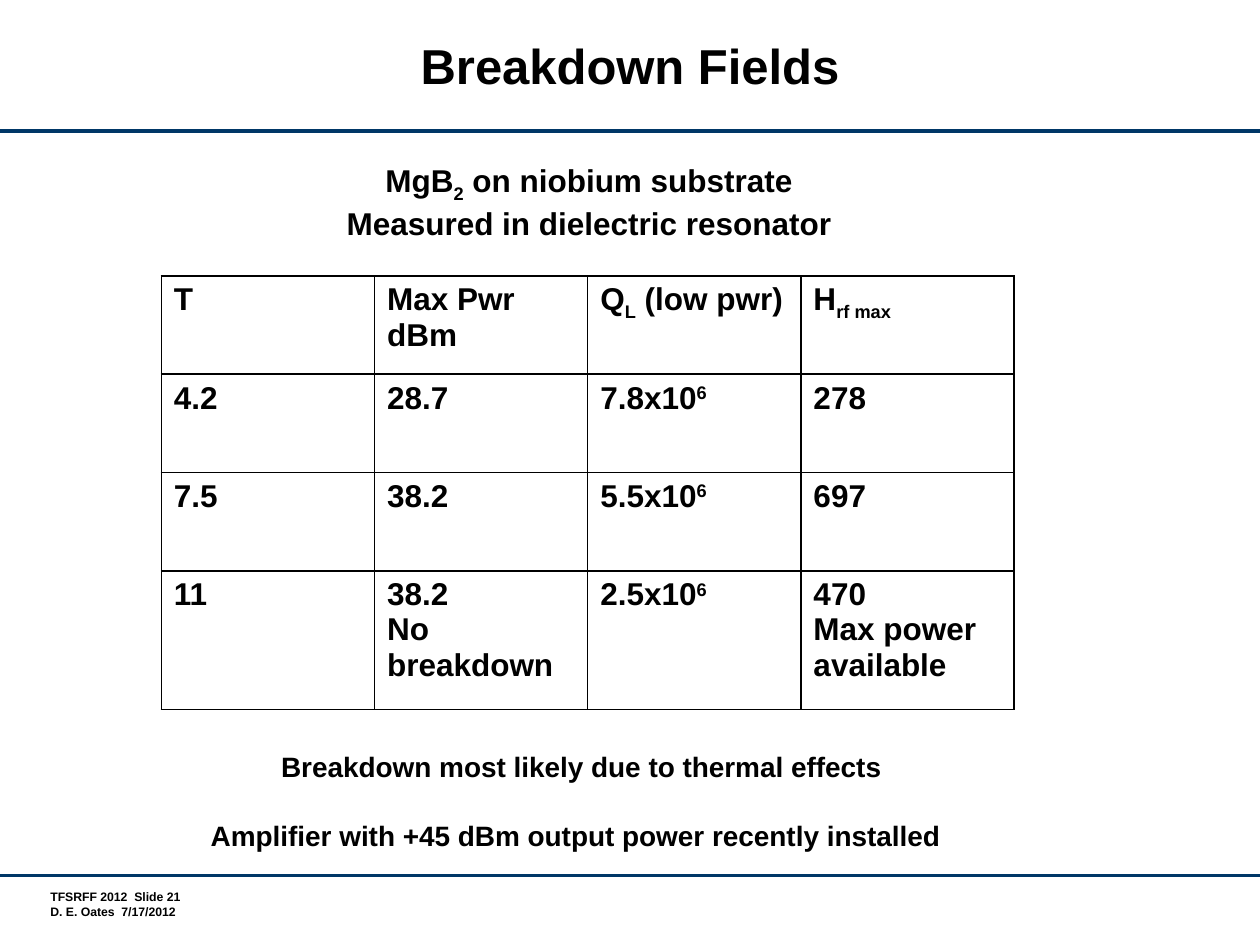
from lxml.etree import SubElement
from pptx import Presentation
from pptx.dml.color import RGBColor
from pptx.enum.shapes import MSO_CONNECTOR as CONN
from pptx.enum.text import MSO_ANCHOR as ANCHOR, PP_ALIGN as ALIGN
from pptx.oxml.ns import qn
from pptx.util import Inches, Pt

COLORS = {"rule": "003767", "text": "000000", "border": "000000"}
SUB, SUP = -25, 30
HEADER = [["T"], ["Max Pwr", "dBm"], [["Q", ("L", SUB), " (low pwr)"]],
          [["H", ("rf max", SUB)]]]
MEASUREMENTS = [
    ("4.2", ["28.7"], "7.8", ["278"]),
    ("7.5", ["38.2"], "5.5", ["697"]),
    ("11", ["38.2", "No breakdown"], "2.5", ["470", "Max power available"]),
]


def rgb(name):
    """Return a palette colour."""
    return RGBColor.from_string(COLORS[name])


def write(tf, lines, size, **paragraph_format):
    """Write bold lines; a line is a string or a list of runs and shifted runs."""
    for i, line in enumerate(lines):
        p = tf.add_paragraph() if i else tf.paragraphs[0]
        for key, value in paragraph_format.items():
            setattr(p, key, value)
        for part in [line] if isinstance(line, str) else line:
            text, shift = (part, 0) if isinstance(part, str) else part
            r = p.add_run()
            r.text = text
            for key, value in {"name": "Arial", "size": Pt(size), "bold": True}.items():
                setattr(r.font, key, value)
            r.font.color.rgb = rgb("text")
            if shift:
                r._r.get_or_add_rPr().set("baseline", str(shift * 1000))


def add_text(s, box, lines, size, frame=None, **paragraph_format):
    """Add a text box with the given frame settings."""
    tf = s.shapes.add_textbox(*map(Inches, box)).text_frame
    for key, value in (frame or {"word_wrap": False}).items():
        setattr(tf, key, value)
    write(tf, lines, size, **paragraph_format)


def add_rule(s, y):
    """Add a horizontal rule across the slide."""
    line = s.shapes.add_connector(CONN.STRAIGHT, 0, Inches(y), Inches(10), Inches(y))
    line.line.color.rgb = rgb("rule")
    line.line.width = Pt(1.75)
    SubElement(line._element.spPr, qn("a:effectLst"))


def add_border(cell):
    """Draw a thin line on every side of a cell."""
    tc_pr = cell._tc.get_or_add_tcPr()
    for side in ("lnL", "lnR", "lnT", "lnB"):
        ln = SubElement(tc_pr, qn(f"a:{side}"), w=str(Pt(1)))
        fill = SubElement(ln, qn("a:solidFill"))
        SubElement(fill, qn("a:srgbClr"), val=COLORS["border"])


def add_results_table(s, box, heights):
    """Add the bordered table of breakdown measurements."""
    rows = [HEADER] + [[[t], power, [[f"{q}x10", ("6", SUP)]], field]
                       for t, power, q, field in MEASUREMENTS]
    table = s.shapes.add_table(len(rows), len(HEADER), *map(Inches, box)).table
    table.first_row = table.horz_banding = False
    for column in table.columns:
        column.width = Inches(box[2] / len(HEADER))
    for i, (row, height) in enumerate(zip(rows, heights)):
        table.rows[i].height = Inches(height)
        for j, lines in enumerate(row):
            cell = table.cell(i, j)
            add_border(cell)
            cell.fill.background()
            write(cell.text_frame, lines, 18)


def main():
    """Build the slide and save it."""
    prs = Presentation()
    prs.slide_width, prs.slide_height = Inches(10), Inches(7.5)
    s = prs.slides.add_slide(prs.slide_layouts[6])
    for y in (1.04, 6.95):
        add_rule(s, y)
    add_text(s, (0.35, 7.06, 1.19, 0.24),
             ["TFSRFF 2012  Slide 21", "D. E. Oates  7/17/2012"], 7,
             {"word_wrap": False, "margin_left": Inches(0.05), "margin_top": 0,
              "margin_right": 0, "margin_bottom": 0})
    add_text(s, (1.03, 0.11, 7.94, 0.89), ["Breakdown Fields"], 28,
             {"word_wrap": True, "vertical_anchor": ANCHOR.MIDDLE},
             alignment=ALIGN.CENTER, line_spacing=Pt(28))
    add_results_table(s, (1.28, 2.19, 6.77, 3.45), (0.78, 0.78, 0.78, 1.1))
    add_text(s, (2.63, 1.23, 4.09, 0.71),
             [["MgB", ("2", SUB), " on niobium substrate"],
              "Measured in dielectric resonator"], 18, alignment=ALIGN.CENTER)
    add_text(s, (2.1, 5.9, 5.03, 0.37),
             ["Breakdown most likely due to thermal effects"], 16,
             alignment=ALIGN.CENTER)
    add_text(s, (1.53, 6.45, 6.08, 0.37),
             ["Amplifier with +45 dBm output power recently installed"], 16,
             alignment=ALIGN.CENTER)
    prs.save("out.pptx")


if __name__ == "__main__":
    main()
